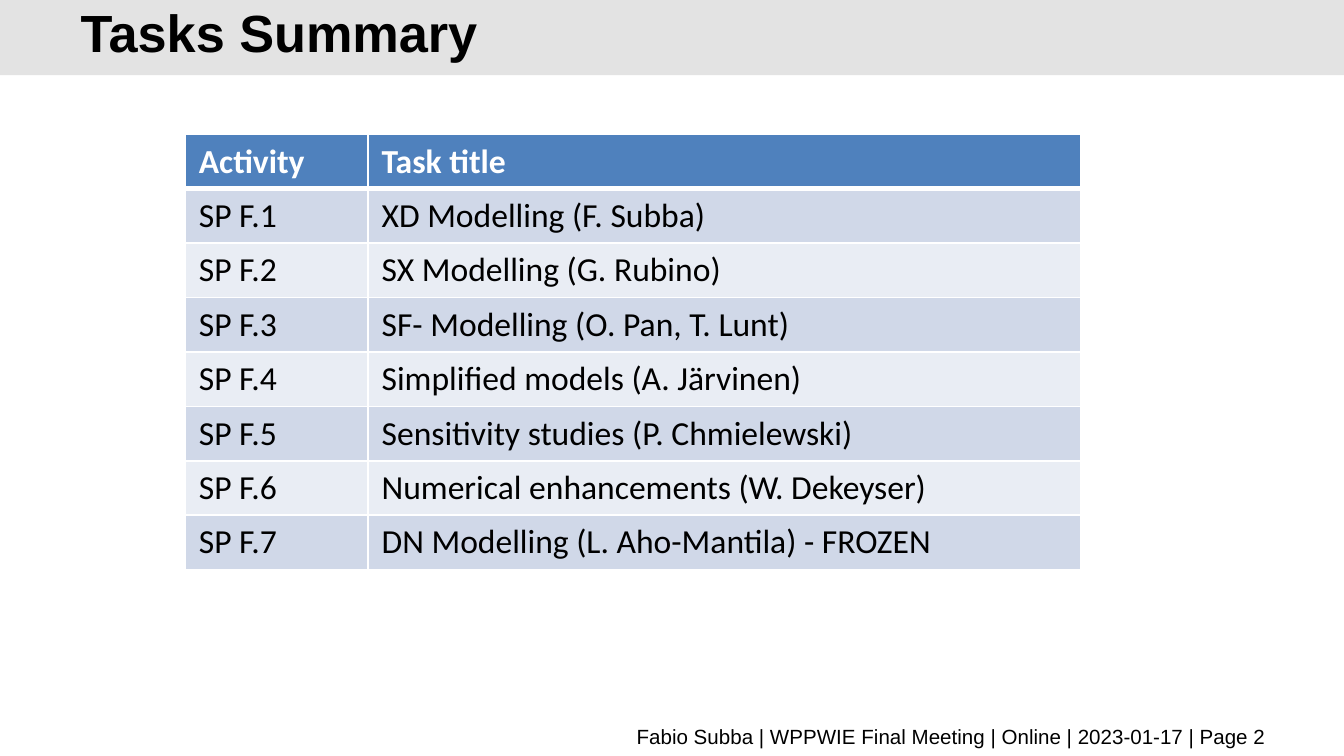
from lxml import etree
from pptx import Presentation
from pptx.dml.color import RGBColor
from pptx.enum import shapes, text
from pptx.oxml import ns
from pptx.util import Inches, Pt

BLACK = RGBColor(0x00, 0x00, 0x00)
WHITE = RGBColor(0xFF, 0xFF, 0xFF)
BAND_GREY = RGBColor(0xE3, 0xE3, 0xE3)
HEADER_BLUE = RGBColor(0x4F, 0x81, 0xBD)
ROW_COLORS = (RGBColor(0xD0, 0xD8, 0xE8), RGBColor(0xE9, 0xED, 0xF4))

TITLE_ONLY_LAYOUT = 5
HEADINGS = ("Activity", "Task title")
TASKS = (
    "XD Modelling (F. Subba)",
    "SX Modelling (G. Rubino)",
    "SF- Modelling (O. Pan, T. Lunt)",
    "Simplified models (A. Järvinen)",
    "Sensitivity studies (P. Chmielewski)",
    "Numerical enhancements (W. Dekeyser)",
    "DN Modelling (L. Aho-Mantila) - FROZEN",
)


def add_run(paragraph, content, font_name, size, color=BLACK, bold=False):
    run = paragraph.add_run()
    run.text = content
    run.font.name = font_name
    run.font.size = Pt(size)
    run.font.color.rgb = color
    run.font.bold = bold


def add_header(slide, left, top, width, height):
    band = slide.shapes.add_shape(
        shapes.MSO_SHAPE.RECTANGLE, Inches(left), Inches(top), Inches(width), Inches(height)
    )
    band.shadow.inherit = False
    band.fill.solid()
    band.fill.fore_color.rgb = BAND_GREY
    band.line.fill.background()

    title = slide.shapes.title
    band.element.addnext(title.element)  # bring the title in front of the band
    title.left, title.top = Inches(left + 0.5), Inches(top + 0.06)
    title.width, title.height = Inches(8.25), Inches(0.38)
    frame = title.text_frame
    frame.auto_size = text.MSO_AUTO_SIZE.NONE
    frame.vertical_anchor = text.MSO_ANCHOR.MIDDLE
    paragraph = frame.paragraphs[0]
    paragraph.alignment = text.PP_ALIGN.LEFT
    paragraph.line_spacing = Pt(32)
    add_run(paragraph, "Tasks Summary", "Arial", 28, bold=True)


def set_borders(cell, **widths):
    """Draw white cell borders; each keyword is a side (L, R, T, B) and its points."""
    properties = cell._tc.get_or_add_tcPr()
    for position, (side, width) in enumerate(widths.items()):
        line = etree.Element(ns.qn(f"a:ln{side}"), w=str(Pt(width)))
        fill = etree.SubElement(line, ns.qn("a:solidFill"))
        etree.SubElement(fill, ns.qn("a:srgbClr"), val=str(WHITE))
        properties.insert(position, line)


def add_task_table(slide, left, top, width, height):
    rows = [HEADINGS] + [(f"SP F.{number}", task) for number, task in enumerate(TASKS, 1)]
    table = slide.shapes.add_table(
        len(rows), len(HEADINGS), Inches(left), Inches(top), Inches(width), Inches(height)
    ).table
    activity_width = 1.36
    table.columns[0].width = Inches(activity_width)
    table.columns[1].width = Inches(width - activity_width)

    for row_index, row in enumerate(rows):
        is_heading = row_index == 0
        for column_index, content in enumerate(row):
            cell = table.cell(row_index, column_index)
            cell.fill.solid()
            cell.fill.fore_color.rgb = HEADER_BLUE if is_heading else ROW_COLORS[(row_index - 1) % 2]
            set_borders(cell, L=1, R=1, T=3 if row_index == 1 else 1, B=3 if is_heading else 1)
            add_run(
                cell.text_frame.paragraphs[0], content, "Calibri", 18,
                WHITE if is_heading else BLACK, bold=is_heading,
            )


def add_footer(slide, left, top, width, height):
    frame = slide.shapes.add_textbox(
        Inches(left), Inches(top), Inches(width), Inches(height)
    ).text_frame
    frame.word_wrap = True
    frame.vertical_anchor = text.MSO_ANCHOR.MIDDLE
    paragraph = frame.paragraphs[0]
    paragraph.alignment = text.PP_ALIGN.RIGHT
    add_run(
        paragraph, "Fabio Subba | WPPWIE Final Meeting | Online | 2023-01-17 | Page 2", "Arial", 11
    )


def main():
    presentation = Presentation()
    presentation.slide_width = Inches(10)
    presentation.slide_height = Inches(10 * 9 / 16)
    slide = presentation.slides.add_slide(presentation.slide_layouts[TITLE_ONLY_LAYOUT])
    add_header(slide, 0, 0, 10, 0.56)
    add_footer(slide, 0.51, 5.37, 9.01, 0.22)
    add_task_table(slide, 1.38, 1, 6.66, 3.24)
    presentation.save("out.pptx")


if __name__ == "__main__":
    main()
